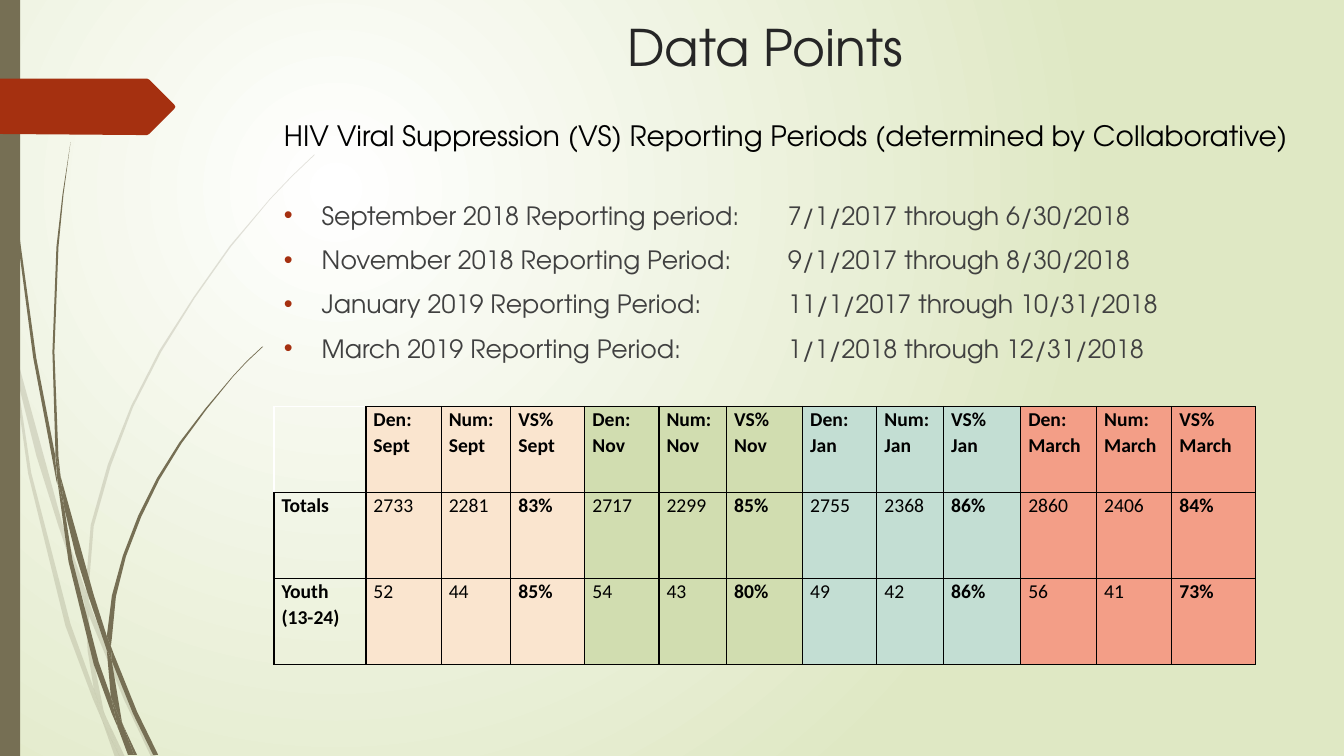
from lxml import etree
from pptx import Presentation
from pptx.dml.color import RGBColor
from pptx.enum.shapes import MSO_SHAPE as Shape
from pptx.enum.text import MSO_ANCHOR as Anchor, PP_ALIGN as Align
from pptx.oxml import parse_xml
from pptx.oxml.ns import nsdecls, qn
from pptx.util import Pt

# Content
TITLE = "Data Points"
HEADING = "HIV Viral Suppression (VS) Reporting Periods (determined by Collaborative)"
PERIODS = [
    ("September 2018 Reporting period:", "7/1/2017 through 6/30/2018"),
    ("November 2018 Reporting Period:", "9/1/2017 through 8/30/2018"),
    ("January 2019 Reporting Period:", "11/1/2017 through 10/31/2018"),
    ("March 2019 Reporting Period:", "1/1/2018 through 12/31/2018"),
]
MEASURES = ["Den:", "Num:", "VS%"]
MONTHS = ["Sept", "Nov", "Jan", "March"]
ROWS = [
    ("Totals", ["2733", "2281", "83%", "2717", "2299", "85%",
                "2755", "2368", "86%", "2860", "2406", "84%"]),
    ("Youth (13-24)", ["52", "44", "85%", "54", "43", "80%",
                       "49", "42", "86%", "56", "41", "73%"]),
]

# Look
COLORS = {
    "olive": "766F54", "rust": "A53010", "title": "262626", "body": "404040",
    "black": "000000", "white": "FFFFFF", "edge": "DFE8C4",
    "Sept": "FAE5CF", "Nov": "D1DDB0", "Jan": "C3DED3", "March": "F39E87",
}
DISPLAY, PLAIN = "TeX Gyre Adventor", "Calibri"
COLUMN_WIDTHS = [65.7, 53.8, 49.8, 52.8, 53, 48.4, 54.3, 53, 47.7, 55.1, 54.2, 53.8, 60]
ROW_HEIGHT = 61.4
LEFT = 195.7
TAB_STOP = 360

# Outlines, in steps of 0.72 points
STEP = Pt(0.72)
PALE_GRASS = [
    [(11, 350), (9, 322), (0, 282), (0, 299), (10, 344)],
    [(58, 522), (84, 599), (85, 586), (62, 520), (14, 345), (17, 376), (36, 452)],
    [(92, 607), (88, 596), (88, 610), (123, 694), (150, 751), (155, 751), (127, 692)],
    [(119, 751), (124, 751), (105, 711)],
    [(93, 683), (70, 619), (31, 469), (17, 376), (11, 350), (28, 470), (65, 621),
     (92, 693), (101, 714), (99, 707)],
    [(84, 599), (87, 646), (93, 683), (96, 692), (105, 711), (103, 706), (91, 646),
     (88, 610), (88, 608)],
    [(88, 584), (93, 522), (110, 462), (132, 404), (160, 349), (193, 296), (229, 245),
     (268, 198), (290, 175), (312, 154), (312, 153), (289, 175), (268, 197), (228, 244),
     (192, 295), (158, 348), (130, 403), (107, 461), (90, 521), (85, 584), (85, 586),
     (88, 596)],
    [(101, 714), (114, 751), (119, 751)],
    [(88, 608), (88, 610), (88, 596), (85, 586), (84, 599)],
    [(96, 692), (93, 683), (99, 707), (101, 714), (119, 751), (105, 711)],
]
DARK_GRASS = [
    [(7, 110), (17, 233), (33, 355), (56, 477), (57, 481), (55, 457), (55, 453),
     (36, 355), (19, 232), (8, 109), (5, 48), (4, 0), (3, 0), (4, 48)],
    [(88, 592), (106, 645), (106, 631), (93, 590), (60, 472), (64, 505), (75, 550)],
    [(113, 649), (110, 641), (111, 656), (132, 708), (152, 749), (157, 749), (136, 706)],
    [(110, 691), (98, 657), (72, 556), (64, 505), (57, 477), (68, 557), (93, 659),
     (111, 708), (117, 722), (116, 717)],
    [(60, 472), (58, 453), (54, 349), (58, 245), (63, 193), (70, 141), (62, 193),
     (56, 245), (52, 349), (55, 449)],
    [(133, 749), (136, 749), (122, 719)],
    [(57, 477), (64, 505), (60, 472), (55, 449), (55, 453)],
    [(111, 633), (115, 592), (125, 552), (140, 513), (158, 476), (180, 440), (205, 406),
     (231, 374), (245, 359), (261, 344), (260, 344), (245, 358), (231, 373), (204, 405),
     (178, 439), (156, 474), (137, 512), (122, 551), (111, 591), (106, 631), (110, 641)],
    [(117, 722), (127, 749), (131, 749)],
    [(106, 645), (110, 691), (116, 706), (122, 719), (121, 716), (111, 656), (109, 651)],
    [(106, 645), (109, 651), (111, 656), (110, 641), (106, 631)],
    [(116, 706), (110, 691), (116, 717), (117, 722), (130, 749), (133, 749), (122, 719)],
]
TAG = [(173, 108), (148, 133), (146, 134), (136, 134), (0, 133), (0, 78),
       (146, 78), (148, 79), (173, 104), (174, 106)]


def rgb(name):
    return RGBColor.from_string(COLORS[name])


def paint(shape, color, alpha=None):
    shape.shadow.inherit = False
    shape.line.fill.background()
    shape.fill.solid()
    shape.fill.fore_color.rgb = rgb(color)
    if alpha:
        tint = shape.fill._xPr.find(".//" + qn("a:srgbClr"))
        etree.SubElement(tint, qn("a:alpha"), val=str(alpha * 1000))


def draw_outline(shapes, points, color, alpha=None):
    builder = shapes.build_freeform(*points[0], scale=STEP)
    builder.add_line_segments(points[1:], close=True)
    paint(builder.convert_to_shape(), color, alpha)


def write(frame, text, size=14, font=PLAIN, color="black", bold=False,
          align=Align.LEFT, before=0, spacing=None):
    """Fill the first paragraph, or add one after it."""
    used = frame.paragraphs[0].runs
    paragraph = frame.add_paragraph() if used else frame.paragraphs[0]
    paragraph.alignment = align
    paragraph.space_before = Pt(before)
    if spacing:
        paragraph.line_spacing = spacing
    run = paragraph.add_run()
    run.text = text
    run.font.size, run.font.name, run.font.bold = Pt(size), font, bold
    run.font.color.rgb = rgb(color)
    return paragraph


def add_bullet(paragraph):
    properties = paragraph._p.get_or_add_pPr()
    properties.set("marL", str(Pt(27)))
    properties.set("indent", str(-Pt(27)))
    for xml in (f'<a:buClr {nsdecls("a")}><a:srgbClr val="{COLORS["rust"]}"/></a:buClr>',
                f'<a:buFont {nsdecls("a")} typeface="Arial"/>',
                f'<a:buChar {nsdecls("a")} char="•"/>',
                f'<a:tabLst {nsdecls("a")}><a:tab pos="{Pt(TAB_STOP)}" algn="l"/></a:tabLst>'):
        properties.append(parse_xml(xml))


def add_borders(cell, **colors):
    properties = cell._tc.get_or_add_tcPr()
    for index, side in enumerate(("lnL", "lnR", "lnT", "lnB")):
        color = COLORS[colors.get(side, "black")]
        properties.insert(index, parse_xml(
            f'<a:{side} {nsdecls("a")} w="{Pt(1)}"><a:solidFill>'
            f'<a:srgbClr val="{color}"/></a:solidFill></a:{side}>'))


def add_text_box(slide, left, top, width, height, anchor):
    frame = slide.shapes.add_textbox(Pt(left), Pt(top), Pt(width), Pt(height)).text_frame
    frame.word_wrap = True
    frame.vertical_anchor = anchor
    return frame


def add_background(slide):
    fill = slide.background.fill
    fill.gradient()
    for stop, position, color in zip(fill.gradient_stops, (0, 1), ("white", "edge")):
        stop.position = position
        stop.color.rgb = rgb(color)
    linear = slide.background._cSld.find(".//" + qn("a:lin"))
    linear.getparent().replace(linear, parse_xml(
        f'<a:path {nsdecls("a")} path="circle">'
        '<a:fillToRect l="50000" t="50000" r="100000" b="100000"/></a:path>'))


def add_results(slide):
    table = slide.shapes.add_table(
        len(ROWS) + 1, len(COLUMN_WIDTHS), Pt(LEFT), Pt(290.4),
        Pt(sum(COLUMN_WIDTHS)), Pt(ROW_HEIGHT * (len(ROWS) + 1))).table
    table.first_row = table.horz_banding = False
    for column, width in zip(table.columns, COLUMN_WIDTHS):
        column.width = Pt(width)
    headers = [(measure, month) for month in MONTHS for measure in MEASURES]
    lines = [[()] + headers] + [[(label,)] + [(value,) for value in values]
                                for label, values in ROWS]
    for row, texts in enumerate(lines):
        table.rows[row].height = Pt(ROW_HEIGHT)
        for column, text in enumerate(texts):
            cell = table.cell(row, column)
            cell.margin_left = cell.margin_right = Pt(5.4)
            cell.margin_top = cell.margin_bottom = 0
            if column:
                cell.fill.solid()
                cell.fill.fore_color.rgb = rgb(headers[column - 1][1])
            else:
                cell.fill.background()
            corner = row == column == 0
            add_borders(cell, **({"lnL": "white", "lnT": "white"} if corner else {}))
            for part in text:
                write(cell.text_frame, part, spacing=1.07,
                      bold=row == 0 or column % len(MEASURES) == 0)


def main():
    presentation = Presentation()
    presentation.slide_width, presentation.slide_height = Pt(960), Pt(540)
    slide = presentation.slides.add_slide(presentation.slide_layouts[6])
    add_background(slide)

    # Grass, side bar and tag
    for blades, alpha in ((PALE_GRASS, 20), (DARK_GRASS, None)):
        group = slide.shapes.add_group_shape()
        for blade in blades:
            draw_outline(group.shapes, blade, "olive", alpha)
    paint(slide.shapes.add_shape(Shape.RECTANGLE, 0, 0, Pt(14.4), Pt(540)), "olive")
    draw_outline(slide.shapes, TAG, "rust")

    # Title and reporting periods
    title = add_text_box(slide, LEFT, 6.5, 702, 52.6, Anchor.MIDDLE)
    write(title, TITLE, size=36, font=DISPLAY, color="title", align=Align.CENTER)
    body = add_text_box(slide, LEFT, 81.4, 746.6, 183.6, Anchor.TOP)
    write(body, HEADING, size=20, font=DISPLAY)
    for index, period in enumerate(PERIODS):
        add_bullet(write(body, "\t".join(period), size=18, font=DISPLAY,
                         color="body", before=10 if index else 34))

    add_results(slide)
    presentation.save("out.pptx")


if __name__ == "__main__":
    main()
